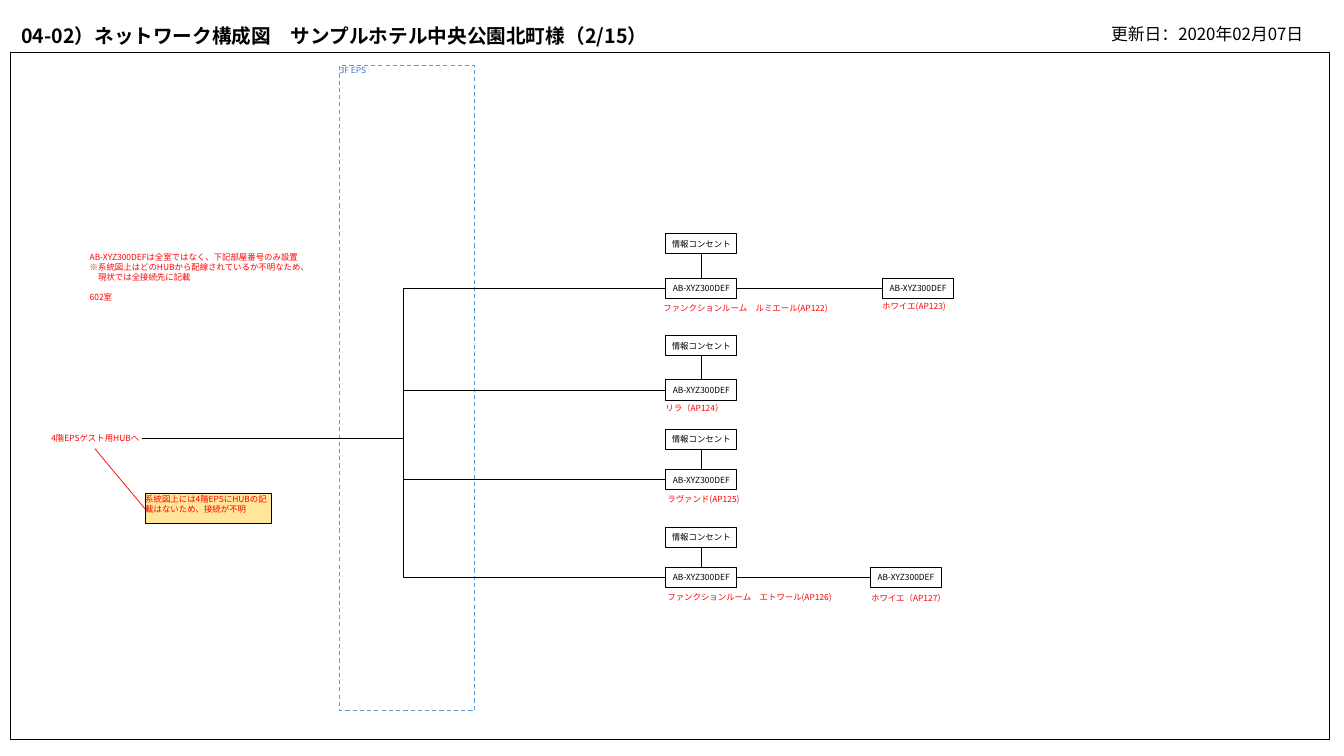
from pptx import Presentation
from pptx.dml.color import RGBColor
from pptx.enum.dml import MSO_LINE_DASH_STYLE as Dash
from pptx.enum.shapes import MSO_CONNECTOR as Link, MSO_SHAPE as Shape
from pptx.enum.text import MSO_ANCHOR as Anchor, PP_ALIGN as Align
from pptx.oxml.ns import qn
from pptx.util import Inches, Pt
from lxml.etree import SubElement

TITLE = "04-02）ネットワーク構成図　サンプルホテル中央公園北町様（2/15）"
UPDATED = "更新日：2020年02月07日"
ZONE = "3F EPS"
HUB = "4階EPSゲスト用HUBへ"
HUB_NOTE = "系統図上には4階EPSにHUBの記載はないため、接続が不明"
DEVICE = "AB-XYZ300DEF"
OUTLET = "情報コンセント"
# text, left indent and space before in points
ROOM_NOTE = [
    (DEVICE + "は全室ではなく、下記部屋番号のみ設置", 0, 0),
    ("※系統図上はどのHUBから配線されているか不明なため、", 0, 0),
    ("現状では全接続先に記載", 6, 0),
    ("602室", 0, 7.3),
]
# device centre y, outlet centre y, room, (left, top) of its label, second device
BRANCHES = [
    (2.86, 2.42, "ファンクションルーム　ルミエール(AP122)", (6.58, 2.96),
     (8.75, "ホワイエ(AP123)", (8.75, 2.94))),
    (3.87, 3.43, "リラ（AP124）", (6.6, 3.95), None),
    (4.76, 4.36, "ラヴァンド(AP125)", (6.62, 4.85), None),
    (5.73, 5.33, "ファンクションルーム　エトワール(AP126)", (6.62, 5.82),
     (8.63, "ホワイエ（AP127）", (8.64, 5.83))),
]

THEME = dict(
    font="Noto Sans CJK JP", small=6, title=14, date=12,
    ink="000000", red="FF0000", zone_line="5B9BD5", zone_text="4472C4",
    note_fill="FFE699", hairline=0, wire=0.5,
)
BOX_W, BOX_H, BOX_X = 0.71, 0.2, 6.6
LABEL_W = 1.8
HUB_X, HUB_Y = 1.41, 4.35


def rgb(key):
    return RGBColor.from_string(THEME[key])


def write(shape, lines, size="small", color="ink", bold=False,
          align=Align.LEFT, anchor=Anchor.MIDDLE):
    """Fill a shape with lines of (text, left indent, space before)."""
    tf = shape.text_frame
    settings = dict(word_wrap=True, vertical_anchor=anchor, margin_left=0,
                    margin_right=0, margin_top=0, margin_bottom=0)
    for name, value in settings.items():
        setattr(tf, name, value)
    for i, (text, indent, before) in enumerate(lines):
        p = tf.add_paragraph() if i else tf.paragraphs[0]
        p.alignment = align
        if before:
            p.space_before = Pt(before)
        if indent:
            p._p.get_or_add_pPr().set("marL", str(Pt(indent)))
        r = p.add_run()
        r.text = text
        look = dict(name=THEME["font"], size=Pt(THEME[size]), bold=bold)
        for name, value in look.items():
            setattr(r.font, name, value)
        r.font.color.rgb = rgb(color)
        SubElement(r._r.get_or_add_rPr(), qn("a:ea"), typeface=THEME["font"])


def add_text(s, at, text, **style):
    lines = [(text, 0, 0)] if isinstance(text, str) else text
    write(s.shapes.add_textbox(*map(Inches, at)), lines, **style)


def add_box(s, at, text="", line="ink", fill=None, dash=None, **style):
    sp = s.shapes.add_shape(Shape.RECTANGLE, *map(Inches, at))
    sp.shadow.inherit = False
    if fill:
        sp.fill.solid()
        sp.fill.fore_color.rgb = rgb(fill)
    else:
        sp.fill.background()
    sp.line.color.rgb = rgb(line)
    sp.line.width = Pt(THEME["hairline"])
    if dash:
        sp.line.dash_style = dash
    if text:
        write(sp, [(text, 0, 0)], **style)


def add_node(s, x, y, text):
    """Small box whose left edge is x and whose centre line is y."""
    add_box(s, (x, y - BOX_H / 2, BOX_W, BOX_H), text, align=Align.CENTER)


def add_wire(s, start, end, kind=Link.STRAIGHT, color="ink"):
    c = s.shapes.add_connector(kind, *map(Inches, (*start, *end)))
    c.line.color.rgb = rgb(color)
    c.line.width = Pt(THEME["wire"])
    SubElement(c._element.spPr, qn("a:effectLst"))


def add_branch(s, y, outlet_y, room, label_at, second):
    add_wire(s, (HUB_X, HUB_Y), (BOX_X, y), Link.ELBOW)
    add_node(s, BOX_X, y, DEVICE)
    middle = BOX_X + BOX_W / 2
    add_wire(s, (middle, y - BOX_H / 2), (middle, outlet_y + BOX_H / 2))
    add_node(s, BOX_X, outlet_y, OUTLET)
    add_text(s, (*label_at, LABEL_W, BOX_H), room, color="red")
    if second:
        x, name, name_at = second
        add_wire(s, (BOX_X + BOX_W, y), (x, y))
        add_node(s, x, y, DEVICE)
        add_text(s, (*name_at, LABEL_W, BOX_H), name, color="red")


def main():
    prs = Presentation()
    prs.slide_width, prs.slide_height = Inches(13.33), Inches(7.5)
    s = prs.slides.add_slide(prs.slide_layouts[6])

    add_text(s, (0.21, 0.17, 6.67, 0.36), TITLE, size="title", bold=True)
    add_text(s, (11.02, 0.16, 2.16, 0.36), UPDATED, size="date")
    add_box(s, (0.1, 0.52, 13.09, 6.82))
    add_box(s, (3.37, 0.65, 1.34, 6.4), ZONE, line="zone_line", dash=Dash.DASH,
            color="zone_text", anchor=Anchor.TOP)

    for branch in BRANCHES:
        add_branch(s, *branch)

    add_text(s, (0.89, 2.07, 2.36, 1.36), ROOM_NOTE, color="red")
    add_text(s, (0.47, 4.25, 0.95, 0.2), HUB, color="red", align=Align.CENTER)
    add_box(s, (1.44, 4.9, 1.25, 0.29), HUB_NOTE, fill="note_fill",
            color="red", anchor=Anchor.TOP)
    add_wire(s, (0.94, 4.45), (1.44, 5.05), color="red")

    prs.save("out.pptx")


if __name__ == "__main__":
    main()
